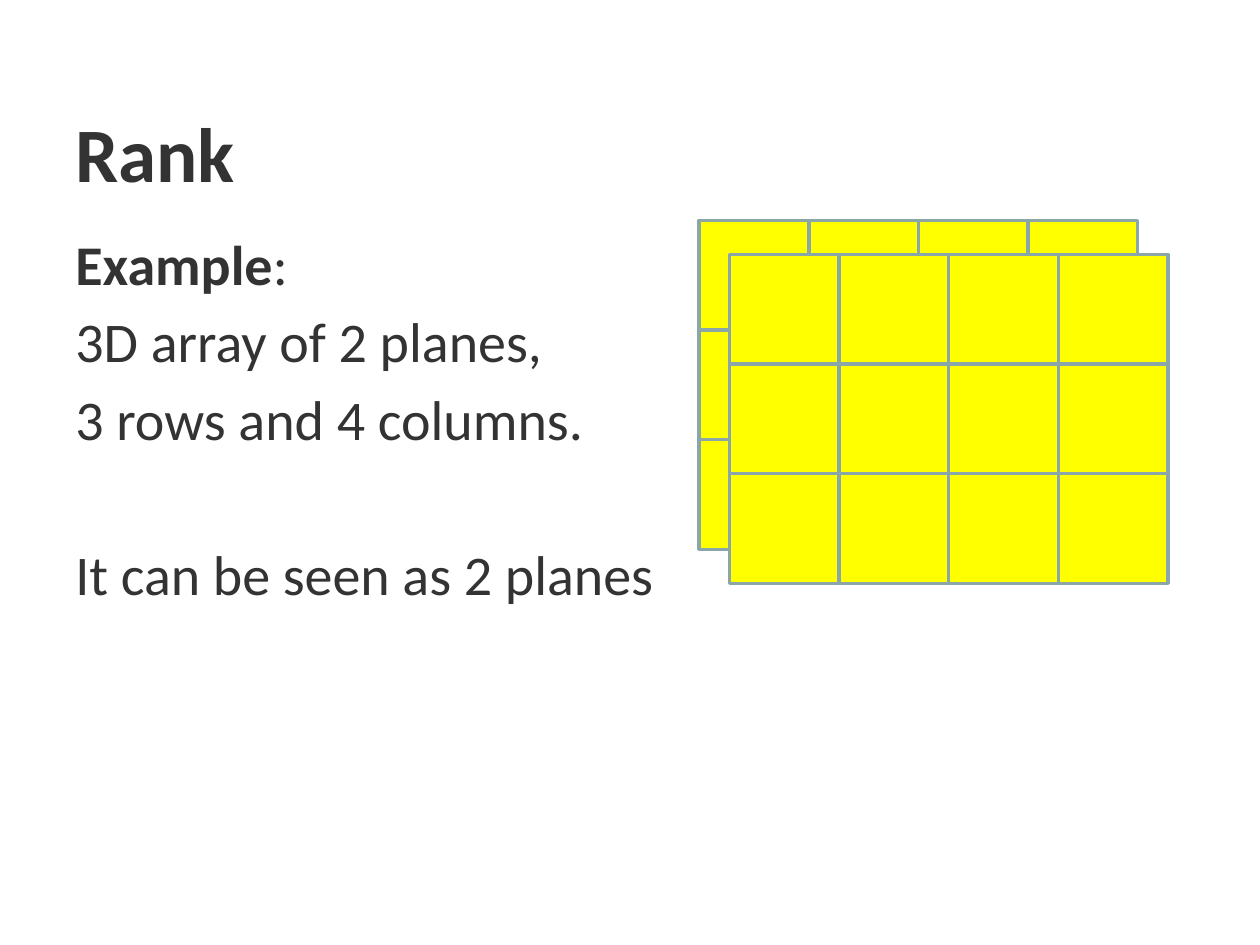
from dataclasses import dataclass
from pptx import Presentation
from pptx.dml.color import RGBColor
from pptx.enum.shapes import MSO_SHAPE
from pptx.util import Inches, Pt


@dataclass(frozen=True)
class Theme:
    font: str = "Calibri"
    ink: RGBColor = RGBColor(0x33, 0x33, 0x33)
    cell: RGBColor = RGBColor(0xFF, 0xFF, 0x00)
    edge: RGBColor = RGBColor(0x8A, 0xA6, 0xA8)
    title: Pt = Pt(44)
    body: Pt = Pt(32)
    line: Pt = Pt(2)


class Canvas:
    """Draws styled text and array planes on one slide."""

    def __init__(self, slide, theme):
        self.slide = slide
        self.theme = theme

    def text(self, left, top, width, height, lines, size):
        box = self.slide.shapes.add_textbox(
            Inches(left), Inches(top), Inches(width), Inches(height))
        frame = box.text_frame
        frame.word_wrap = True
        for index, (runs, gap) in enumerate(lines):
            para = frame.add_paragraph() if index else frame.paragraphs[0]
            para.space_before = Pt(gap)
            para.font.name = self.theme.font
            para.font.size = size
            para.font.color.rgb = self.theme.ink
            for words, bold in runs:
                run = para.add_run()
                run.text = words
                run.font.bold = bold

    def plane(self, left, top, rows, cols, side):
        group = self.slide.shapes.add_group_shape()
        for row in range(rows):
            for col in range(cols):
                cell = group.shapes.add_shape(
                    MSO_SHAPE.RECTANGLE,
                    Inches(left + col * side), Inches(top + row * side),
                    Inches(side), Inches(side))
                cell.shadow.inherit = False
                cell.fill.solid()
                cell.fill.fore_color.rgb = self.theme.cell
                cell.line.color.rgb = self.theme.edge
                cell.line.width = self.theme.line


def main():
    deck = Presentation()
    deck.slide_width, deck.slide_height = Inches(10), Inches(7.5)
    theme = Theme()
    canvas = Canvas(deck.slides.add_slide(deck.slide_layouts[6]), theme)

    canvas.text(0.5, 0.79, 9, 1.25, [([("Rank", True)], 0)], theme.title)
    canvas.text(0.5, 1.77, 9, 4.95, [
        ([("Example", True), (":", False)], 0),
        ([("3D array of 2 planes,", False)], 5.8),
        ([("3 rows and 4 columns.", False)], 5.8),
        ([("It can be seen as 2 planes", False)], 50.7),
    ], theme.body)
    for left, top in ((5.55, 1.75), (5.79, 2.02)):
        canvas.plane(left, top, rows=3, cols=4, side=0.87)

    deck.save("out.pptx")


if __name__ == "__main__":
    main()
